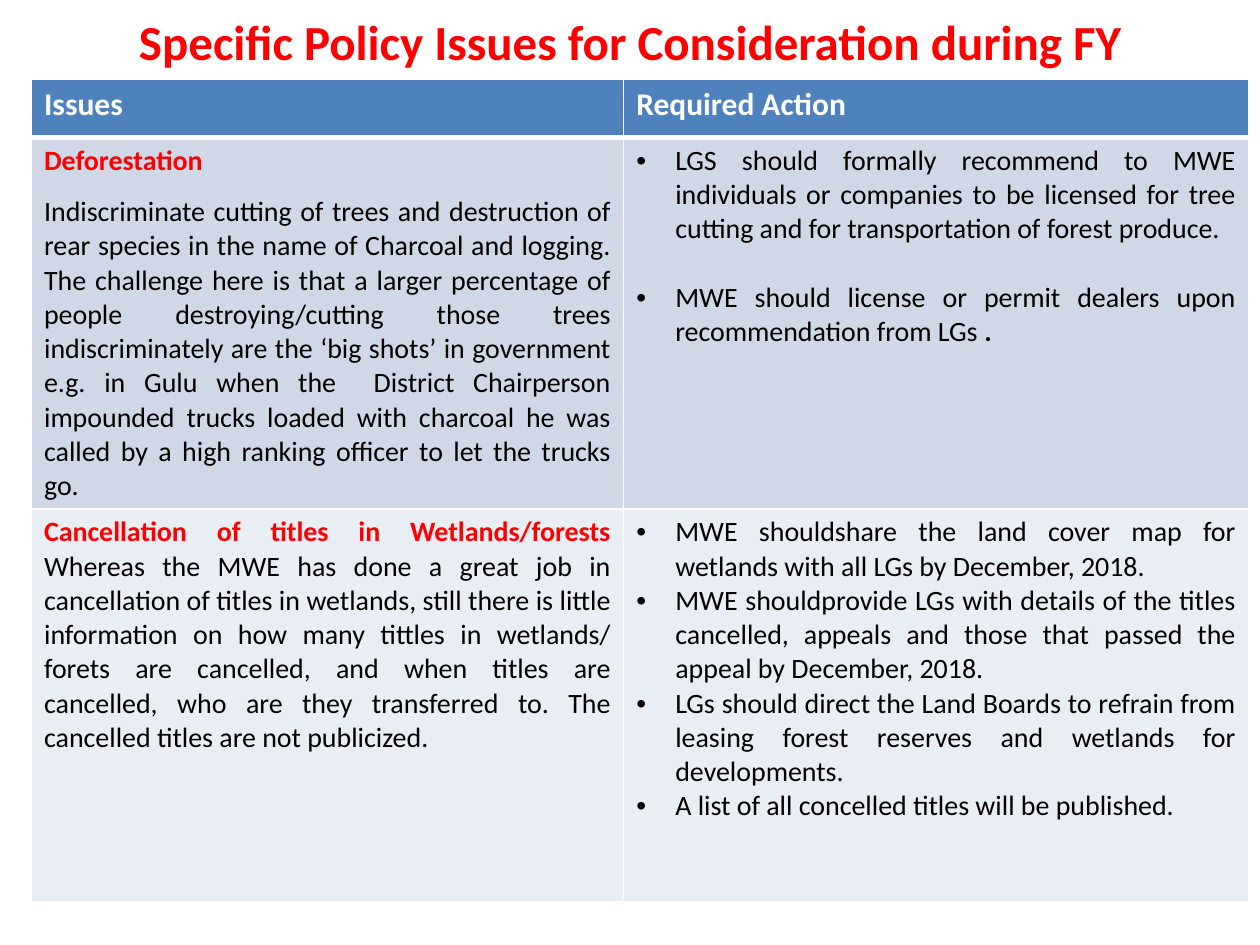
from lxml import etree
from pptx import Presentation
from pptx.dml.color import RGBColor
from pptx.enum.text import MSO_ANCHOR, PP_ALIGN
from pptx.oxml.ns import qn
from pptx.util import Inches, Pt

CENTER, LEFT, JUSTIFY = PP_ALIGN.CENTER, PP_ALIGN.LEFT, PP_ALIGN.JUSTIFY
MIDDLE = MSO_ANCHOR.MIDDLE

RED = RGBColor(0xFF, 0x00, 0x00)
BLACK = RGBColor(0x00, 0x00, 0x00)
WHITE = RGBColor(0xFF, 0xFF, 0xFF)
BLUE = RGBColor(0x4F, 0x81, 0xBD)
PALE_BLUE = RGBColor(0xD0, 0xD8, 0xE8)
PALER_BLUE = RGBColor(0xE9, 0xED, 0xF4)

SLIDE_W, SLIDE_H = Inches(10), Inches(7.5)
COLUMNS = (4.7, 4.96)
ROWS = (0.46, 2.95, 3.12)
ROW_FILLS = (BLUE, PALE_BLUE, PALER_BLUE)
INDENT = Inches(0.31)

TITLE = {"size": Pt(28), "bold": True, "color": RED}
HEADER = {"size": Pt(18), "bold": True, "color": WHITE}
TOPIC = {"size": Pt(16), "bold": True, "color": RED}
BODY = {"size": Pt(16), "bold": False, "color": BLACK}
STRONG = {**BODY, "bold": True}

PLAIN = {"alignment": LEFT}
JUSTIFIED = {"alignment": JUSTIFY}
AFTER_TOPIC = {"alignment": JUSTIFY, "space_before": Pt(9.8)}
AFTER_GAP = {"alignment": JUSTIFY, "space_before": Pt(19.5)}

HEADINGS = [
    [(PLAIN, False, [("Issues", HEADER)])],
    [(PLAIN, False, [("Required Action", HEADER)])],
]
DEFORESTATION = [
    [
        (JUSTIFIED, False, [("Deforestation ", TOPIC)]),
        (AFTER_TOPIC, False, [(
            "Indiscriminate cutting of trees and destruction of rear species in the name of "
            "Charcoal and logging. The challenge here is that a larger percentage of people "
            "destroying/cutting those trees indiscriminately are the ‘big shots’ in government "
            "e.g. in Gulu when the  District Chairperson impounded trucks loaded with charcoal "
            "he was called by a high ranking officer to let the trucks go.", BODY)]),
    ],
    [
        (JUSTIFIED, True, [(
            "LGS should formally recommend to MWE individuals or companies to be licensed for "
            "tree cutting and for transportation of forest produce.", BODY)]),
        (AFTER_GAP, True, [
            ("MWE should license or permit dealers upon recommendation from LGs ", BODY),
            (".", STRONG)]),
    ],
]
WETLAND_ACTIONS = (
    "MWE shouldshare the land cover map for wetlands with all LGs by December, 2018.",
    "MWE shouldprovide LGs with details of the titles cancelled, appeals and those that "
    "passed the appeal by December, 2018.",
    "LGs should direct the Land Boards to refrain from leasing forest reserves and wetlands "
    "for developments.",
    "A list of all concelled titles will be published.",
)
WETLANDS = [
    [(JUSTIFIED, False, [
        ("Cancellation of titles in Wetlands/forests ", TOPIC),
        ("Whereas the MWE has done a great job in cancellation of titles in wetlands, still "
         "there is little information on how many tittles in wetlands/ forets are cancelled, "
         "and when titles are cancelled, who are they transferred to. The cancelled titles "
         "are not publicized.", BODY)])],
    [(JUSTIFIED, True, [(action, BODY)]) for action in WETLAND_ACTIONS],
]


def add_bullet(paragraph):
    """Give the paragraph a hanging round bullet."""
    properties = paragraph._p.get_or_add_pPr()
    properties.set("marL", str(INDENT))
    properties.set("indent", str(-INDENT))
    etree.SubElement(properties, qn("a:buFont"), typeface="Arial")
    etree.SubElement(properties, qn("a:buChar"), char="•")


def write_paragraphs(frame, paragraphs):
    """Fill a text frame with formatted paragraphs."""
    for number, (layout, bulleted, passages) in enumerate(paragraphs):
        paragraph = frame.add_paragraph() if number else frame.paragraphs[0]
        for attribute, value in layout.items():
            setattr(paragraph, attribute, value)
        if bulleted:
            add_bullet(paragraph)
        for words, look in passages:
            run = paragraph.add_run()
            run.text = words
            run.font.name = "Calibri"
            run.font.size, run.font.bold = look["size"], look["bold"]
            run.font.color.rgb = look["color"]


def add_borders(cell, widths):
    """Draw white borders of the given point widths around a cell."""
    properties = cell._tc.get_or_add_tcPr()
    for side, width in widths.items():
        line = etree.SubElement(properties, qn(f"a:ln{side}"), w=str(Pt(width)))
        fill = etree.SubElement(line, qn("a:solidFill"))
        etree.SubElement(fill, qn("a:srgbClr"), val=str(WHITE))


def add_title(slide, left, top, width, height):
    """Place the slide title in its box."""
    frame = slide.shapes.add_textbox(left, top, width, height).text_frame
    frame.word_wrap = True
    frame.vertical_anchor = MIDDLE
    heading = "Specific Policy Issues for Consideration during FY"
    write_paragraphs(frame, [({"alignment": CENTER}, False, [(heading, TITLE)])])


def add_issue_table(slide, left, top, width, height):
    """Place the table of issues and required actions in its box."""
    table = slide.shapes.add_table(len(ROWS), len(COLUMNS), left, top, width, height).table
    for column, share in zip(table.columns, COLUMNS):
        column.width = int(width * share / sum(COLUMNS))
    for row, share in zip(table.rows, ROWS):
        row.height = int(height * share / sum(ROWS))
    for r, contents in enumerate((HEADINGS, DEFORESTATION, WETLANDS)):
        for c, paragraphs in enumerate(contents):
            cell = table.cell(r, c)
            add_borders(cell, {"L": 1, "R": 1, "T": 3 if r == 1 else 1, "B": 3 if r == 0 else 1})
            cell.fill.solid()
            cell.fill.fore_color.rgb = ROW_FILLS[r]
            write_paragraphs(cell.text_frame, paragraphs)


def main():
    """Build and save the slide."""
    deck = Presentation()
    deck.slide_width, deck.slide_height = SLIDE_W, SLIDE_H
    slide = deck.slides.add_slide(deck.slide_layouts[6])
    add_title(slide, Inches(0.5), Inches(0.03), Inches(9), Inches(0.59))
    add_issue_table(slide, Inches(0.25), Inches(0.63), Inches(sum(COLUMNS)), Inches(sum(ROWS)))
    deck.save("out.pptx")


if __name__ == "__main__":
    main()
